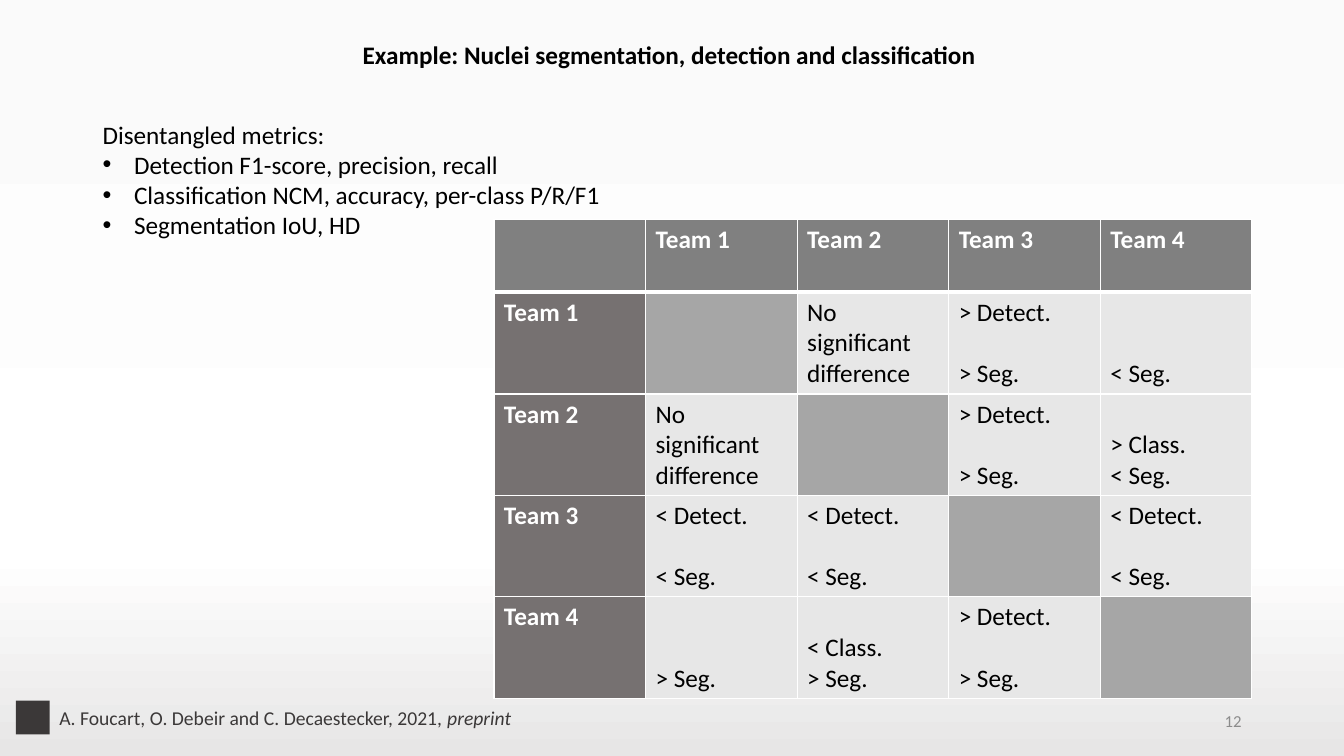
from copy import deepcopy

from lxml.etree import SubElement
from pptx import Presentation
from pptx.dml.color import RGBColor
from pptx.enum.shapes import MSO_SHAPE as Preset
from pptx.enum.text import MSO_ANCHOR as Anchor, MSO_AUTO_SIZE as AutoSize, PP_ALIGN as Align
from pptx.oxml.ns import qn
from pptx.util import Pt

TITLE = "Example: Nuclei segmentation, detection and classification"
INTRO = "Disentangled metrics:"
METRICS = [
    "Detection F1-score, precision, recall",
    "Classification NCM, accuracy, per-class P/R/F1",
    "Segmentation IoU, HD",
]
CITATION = "A. Foucart, O. Debeir and C. Decaestecker, 2021, "
CITATION_STATUS = "preprint"
PAGE_NUMBER = "12"

TEAMS = ["Team 1", "Team 2", "Team 3", "Team 4"]
ASPECTS = ["Detect.", "Class.", "Seg."]
NO_DIFFERENCE = "No significant difference"
# Row team against column team, one sign per aspect; the lower half is mirrored.
VERDICTS = {
    (1, 2): ("", "", ""),
    (1, 3): (">", "", ">"),
    (1, 4): ("", "", "<"),
    (2, 3): (">", "", ">"),
    (2, 4): ("", ">", "<"),
    (3, 4): ("<", "", "<"),
}
MIRROR = {"<": ">", ">": "<", "": ""}

COLOURS = {
    "text": "000000", "light": "FFFFFF", "dark": "3B3838", "number": "8C8C8C",
    "header": "808080", "team": "767171", "diagonal": "A6A6A6", "result": "E7E7E7",
}
BACKGROUND = [(0, "FAFAFA"), (0.73, "FFFFFF"), (1, "E7E6E6")]

TABLE_LEFT, TABLE_TOP = 352.8, 156.6
COLUMN_WIDTH, HEADER_HEIGHT, ROW_HEIGHT = 108.3, 52, 72
LINE_HEIGHT, CELL_MARGIN = 22, 3.6
BULLET_INDENT = 22.5
BODY = {"size": Pt(18), "bold": False}
STRONG = {"size": Pt(18), "bold": True}
SMALL = {"size": Pt(14)}


def rgb(name):
    return RGBColor.from_string(COLOURS[name])


def add_run(para, text, colour, style):
    span = para.add_run()
    span.text = text
    for name, value in {"name": "Calibri", **style}.items():
        setattr(span.font, name, value)
    span.font.color.rgb = rgb(colour)


def add_box(page, left, top, width, height, **frame_format):
    frame = page.shapes.add_textbox(Pt(left), Pt(top), Pt(width), Pt(height)).text_frame
    for name, value in frame_format.items():
        setattr(frame, name, value)
    return frame


def add_bullet(para):
    properties = para._p.get_or_add_pPr()
    properties.set("marL", str(Pt(BULLET_INDENT)))
    properties.set("indent", str(-Pt(BULLET_INDENT)))
    SubElement(properties, qn("a:buFont"), typeface="Arial")
    SubElement(properties, qn("a:buChar"), char="•")


def paint_background(page):
    fill = page.background.fill
    fill.gradient()
    fill.gradient_angle = 270
    stop_list = page.element.find(".//" + qn("a:gsLst"))
    stop_list.append(deepcopy(stop_list[0]))
    for stop, (position, colour) in zip(fill.gradient_stops, BACKGROUND):
        stop.position = position
        stop.color.rgb = RGBColor.from_string(colour)


def style_cell(cell, fill, widths):
    """Fill the cell and draw its borders; widths maps line tags to points."""
    properties = cell._tc.get_or_add_tcPr()
    for tag, width in widths.items():
        line = SubElement(properties, qn("a:" + tag), w=str(Pt(width)))
        solid = SubElement(line, qn("a:solidFill"))
        SubElement(solid, qn("a:srgbClr"), val=COLOURS["light"])
    cell.fill.solid()
    cell.fill.fore_color.rgb = rgb(fill)


def write_verdict(cell, signs):
    """Give each aspect its own line slot, with spacing for the unused ones."""
    frame = cell.text_frame
    if not any(signs):
        add_run(frame.paragraphs[0], NO_DIFFERENCE, "text", BODY)
        return
    previous = None
    for slot, (sign, aspect) in enumerate(zip(signs, ASPECTS)):
        if not sign:
            continue
        if previous is None:
            para = frame.paragraphs[0]
            cell.margin_top = Pt(CELL_MARGIN + slot * LINE_HEIGHT)
        else:
            para = frame.add_paragraph()
            para.space_before = Pt((slot - previous - 1) * LINE_HEIGHT)
        add_run(para, f"{sign} {aspect}", "text", BODY)
        previous = slot


def add_comparison(page):
    count = len(TEAMS) + 1
    table = page.shapes.add_table(
        count, count, Pt(TABLE_LEFT), Pt(TABLE_TOP), Pt(count * COLUMN_WIDTH),
        Pt(HEADER_HEIGHT + len(TEAMS) * ROW_HEIGHT)).table
    table.first_col = True
    table.horz_banding = False
    for column in table.columns:
        column.width = Pt(COLUMN_WIDTH)
    for index, row in enumerate(table.rows):
        row.height = Pt(ROW_HEIGHT if index else HEADER_HEIGHT)

    results = dict(VERDICTS)
    for (first, second), signs in VERDICTS.items():
        results[second, first] = tuple(MIRROR[sign] for sign in signs)

    for row in range(count):
        for column in range(count):
            cell = table.cell(row, column)
            widths = {"lnL": 1, "lnR": 1, "lnT": 3 if row == 1 else 1,
                      "lnB": 1 if row else 3}
            if row == 0 or column == 0:
                fill = "team" if row else "header"
                if row or column:
                    name = TEAMS[max(row, column) - 1]
                    add_run(cell.text_frame.paragraphs[0], name, "light", STRONG)
            elif row == column:
                fill = "diagonal"
            else:
                fill = "result"
                write_verdict(cell, results[row, column])
            style_cell(cell, fill, widths)


def main():
    deck = Presentation()
    deck.slide_width, deck.slide_height = Pt(960), Pt(540)
    page = deck.slides.add_slide(deck.slide_layouts[6])
    paint_background(page)

    number = add_box(page, 678, 500.5, 216, 28.75, word_wrap=True,
                     vertical_anchor=Anchor.MIDDLE).paragraphs[0]
    number.alignment = Align.RIGHT
    add_run(number, PAGE_NUMBER, "number", {"size": Pt(12)})

    fitted = {"auto_size": AutoSize.SHAPE_TO_FIT_TEXT}
    title = add_box(page, 252, 24.5, 456, 29, word_wrap=False, **fitted)
    add_run(title.paragraphs[0], TITLE, "text", STRONG)

    metrics = add_box(page, 66.2, 81.4, 374.4, 94.5, word_wrap=False, **fitted)
    add_run(metrics.paragraphs[0], INTRO, "text", BODY)
    for metric in METRICS:
        para = metrics.add_paragraph()
        add_bullet(para)
        add_run(para, metric, "text", BODY)

    citation = add_box(page, 35.3, 500.4, 833, 24.2, word_wrap=True, **fitted).paragraphs[0]
    add_run(citation, CITATION, "dark", SMALL)
    add_run(citation, CITATION_STATUS, "dark", {**SMALL, "italic": True})

    marker = page.shapes.add_shape(Preset.RECTANGLE, Pt(11.3), Pt(500.4), Pt(24.2), Pt(24.2))
    marker.shadow.inherit = False
    marker.fill.solid()
    marker.fill.fore_color.rgb = rgb("dark")
    marker.line.fill.background()

    add_comparison(page)
    deck.save("out.pptx")


if __name__ == "__main__":
    main()
